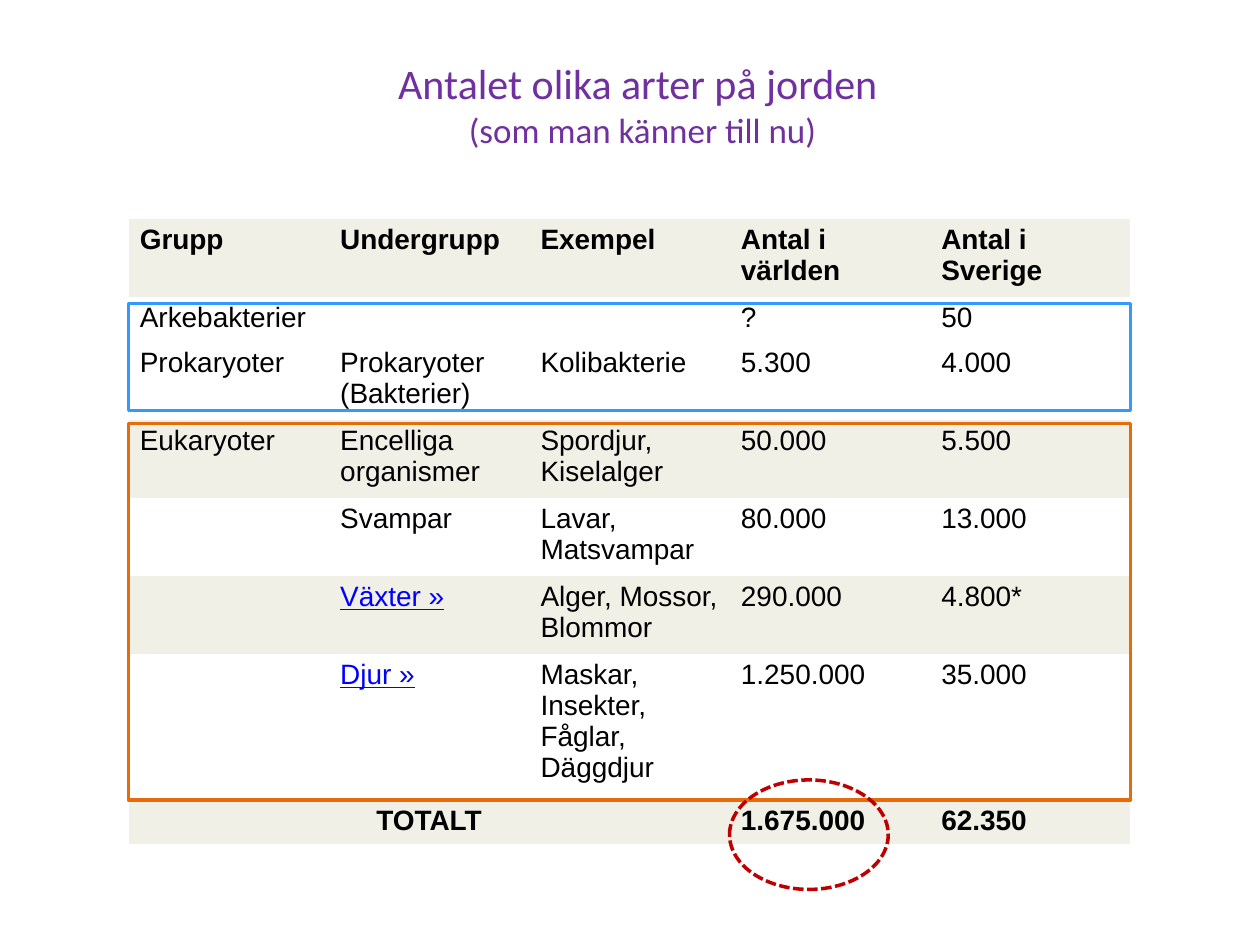
from dataclasses import dataclass

from lxml import etree
from pptx import Presentation
from pptx.dml.color import RGBColor
from pptx.enum.dml import MSO_LINE
from pptx.enum.shapes import MSO_SHAPE
from pptx.enum.text import MSO_ANCHOR, PP_ALIGN
from pptx.oxml.ns import qn
from pptx.util import Pt

CENTER = PP_ALIGN.CENTER
LEFT = PP_ALIGN.LEFT
MIDDLE = MSO_ANCHOR.MIDDLE
RECTANGLE = MSO_SHAPE.RECTANGLE
OVAL = MSO_SHAPE.OVAL
SHORT_DASH = MSO_LINE.SQUARE_DOT
TITLE_ONLY = 5
PLAIN_TABLE_STYLE = "{2D5ABB26-0587-4C30-8999-92F81FD0307C}"


@dataclass(frozen=True)
class Theme:
    """Colours, fonts and type sizes of the slide."""

    title: str = "7030A0"
    text: str = "000000"
    link: str = "0000FF"
    band: str = "F0F0E6"
    plain: str = "FFFFFF"
    prokaryotes: str = "3399FF"
    eukaryotes: str = "E46C0A"
    highlight: str = "C00000"
    title_font: str = "Calibri"
    table_font: str = "Arial"
    title_size: int = 24
    subtitle_size: int = 20
    table_size: int = 16
    outline_width: int = 2


THEME = Theme()
TABLE_LEFT, TABLE_TOP = 73.44, 125.3
COLUMN_WIDTH, COLUMN_COUNT = 114.5, 5
TABLE_WIDTH = COLUMN_WIDTH * COLUMN_COUNT
ONE_LINE, TWO_LINES, FOUR_LINES = 25.4, 44.6, 83.2

SPECIES_ROWS = [
    (TWO_LINES, THEME.band, ["Grupp", "Undergrupp", "Exempel", "Antal i världen", "Antal i Sverige"]),
    (ONE_LINE, THEME.plain, ["Arkebakterier", "", "", "?", "50"]),
    (TWO_LINES, THEME.plain, ["Prokaryoter", "Prokaryoter (Bakterier)", "Kolibakterie", "5.300", "4.000"]),
    (TWO_LINES, THEME.band, ["Eukaryoter", "Encelliga organismer", "Spordjur, Kiselalger", "50.000", "5.500"]),
    (TWO_LINES, THEME.plain, ["", "Svampar", "Lavar, Matsvampar", "80.000", "13.000"]),
    (TWO_LINES, THEME.band, ["", "Växter »", "Alger, Mossor, Blommor", "290.000", "4.800*"]),
    (FOUR_LINES, THEME.plain, ["", "Djur »", "Maskar, Insekter, Fåglar, Däggdjur", "1.250.000", "35.000"]),
    (ONE_LINE, THEME.band, ["TOTALT", "", "", "1.675.000", "62.350"]),
]


def add_text(paragraph, text, *, font, size, color, bold=False, underline=False, align=LEFT):
    """Add a formatted run to a paragraph."""
    paragraph.alignment = align
    run = paragraph.add_run()
    run.text = text
    run.font.name = font
    run.font.size = Pt(size)
    run.font.bold = bold
    run.font.underline = underline
    run.font.color.rgb = RGBColor.from_string(color)


def add_title(slide):
    """Place the title and its smaller second line."""
    title = slide.shapes.title
    title.left, title.top, title.width, title.height = Pt(14.4), Pt(14.4), Pt(705.6), Pt(90)
    title.text_frame.vertical_anchor = MIDDLE
    paragraph = title.text_frame.paragraphs[0]
    style = {"font": THEME.title_font, "color": THEME.title, "align": CENTER}
    add_text(paragraph, "Antalet olika arter på jorden ", size=THEME.title_size, **style)
    paragraph.add_line_break()
    add_text(paragraph, "(som man känner till nu)", size=THEME.subtitle_size, **style)


def fill_cell(cell, text, fill, bold):
    """Set the fill, margins and text of a table cell."""
    cell.fill.solid()
    cell.fill.fore_color.rgb = RGBColor.from_string(fill)
    cell.margin_left = cell.margin_right = Pt(6.5)
    cell.margin_top = cell.margin_bottom = Pt(3)
    paragraph = cell.text_frame.paragraphs[0]
    is_link = text.endswith("»")
    if text:
        add_text(
            paragraph, text, font=THEME.table_font, size=THEME.table_size,
            color=THEME.link if is_link else THEME.text, bold=bold, underline=is_link,
            align=CENTER if cell.is_merge_origin else LEFT,
        )
    else:
        etree.SubElement(paragraph._p, qn("a:endParaRPr"), sz=str(THEME.table_size * 100))


def add_species_table(slide):
    """Add the table of species counts with its merged total label."""
    height = sum(row_height for row_height, _, _ in SPECIES_ROWS)
    table = slide.shapes.add_table(
        len(SPECIES_ROWS), COLUMN_COUNT,
        Pt(TABLE_LEFT), Pt(TABLE_TOP), Pt(TABLE_WIDTH), Pt(height),
    ).table
    table.first_row = table.horz_banding = False
    table._tbl.tblPr.find(qn("a:tableStyleId")).text = PLAIN_TABLE_STYLE
    for column in table.columns:
        column.width = Pt(COLUMN_WIDTH)
    last = len(SPECIES_ROWS) - 1
    table.cell(last, 0).merge(table.cell(last, 2))
    for row_index, (row_height, fill, texts) in enumerate(SPECIES_ROWS):
        table.rows[row_index].height = Pt(row_height)
        for column_index, text in enumerate(texts):
            fill_cell(table.cell(row_index, column_index), text, fill, row_index in (0, last))


def add_outline(slide, kind, left, top, width, height, color, dash=None):
    """Add an unfilled outline around a part of the table."""
    shape = slide.shapes.add_shape(kind, Pt(left), Pt(top), Pt(width), Pt(height))
    shape.shadow.inherit = False
    shape.fill.background()
    shape.line.color.rgb = RGBColor.from_string(color)
    shape.line.width = Pt(THEME.outline_width)
    if dash is not None:
        shape.line.dash_style = dash


def main():
    """Build and save the slide."""
    presentation = Presentation()
    presentation.slide_width, presentation.slide_height = Pt(720), Pt(540)
    slide = presentation.slides.add_slide(presentation.slide_layouts[TITLE_ONLY])
    add_title(slide)
    add_species_table(slide)
    add_outline(slide, RECTANGLE, TABLE_LEFT, 173.5, TABLE_WIDTH, 61.2, THEME.prokaryotes)
    add_outline(slide, RECTANGLE, TABLE_LEFT, 241.9, TABLE_WIDTH, 215.3, THEME.eukaryotes)
    add_outline(slide, OVAL, 416.9, 445.7, 90.7, 62.6, THEME.highlight, SHORT_DASH)
    presentation.save("out.pptx")


if __name__ == "__main__":
    main()
